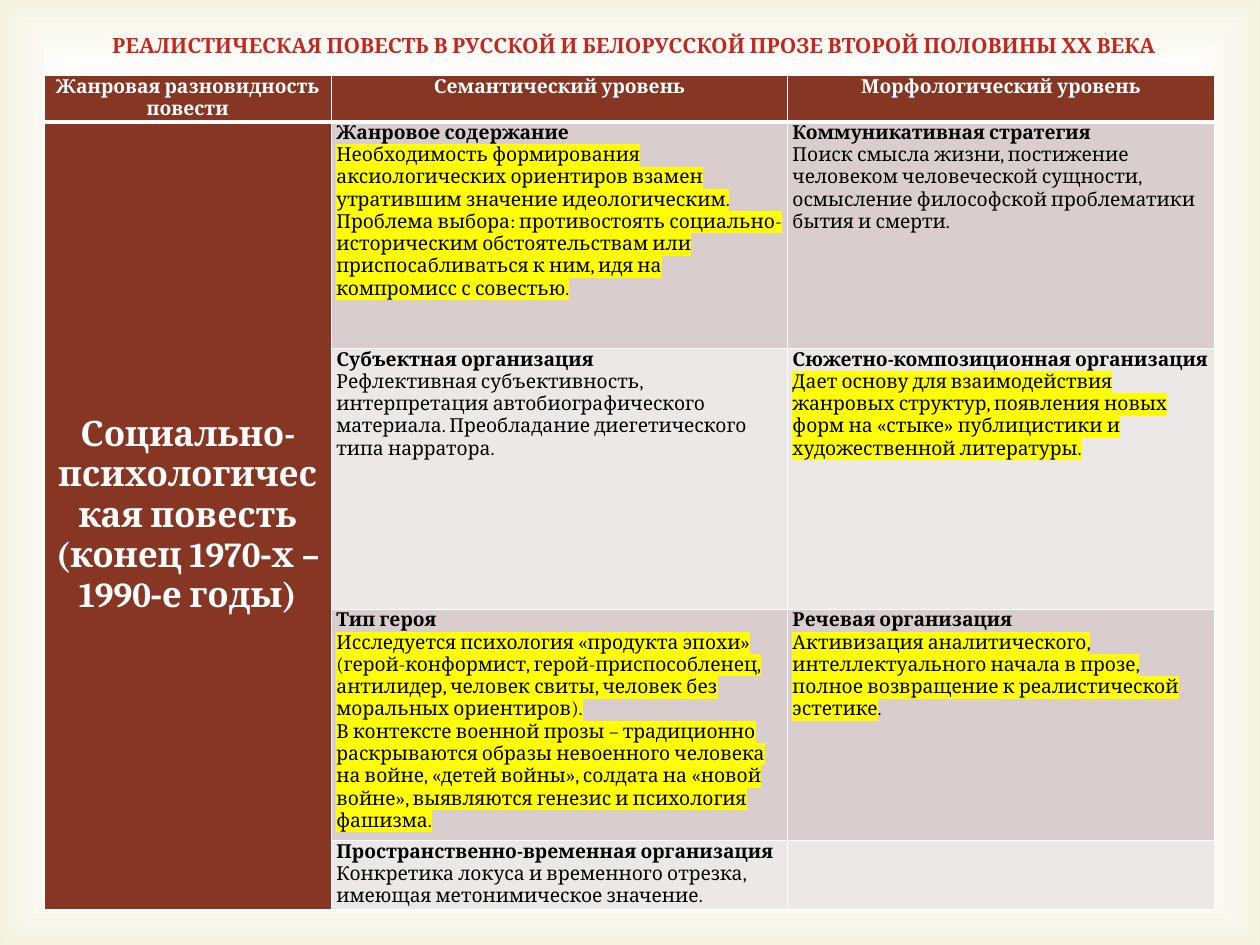
from collections import namedtuple
from dataclasses import dataclass

from lxml import etree
from pptx import Presentation
from pptx import util as u
from pptx.dml.color import RGBColor
from pptx.enum import shapes, text
from pptx.oxml import parse_xml
from pptx.oxml.ns import nsdecls, qn

Box = namedtuple("Box", "left top width height")
Run = namedtuple("Run", "words marked", defaults=(False,))


@dataclass(frozen=True)
class Theme:
    font: str = "Cambria"
    title: str = "C00000"
    ink: str = "000000"
    paper: str = "FFFFFF"
    glow: str = "D1CA75"
    brown: str = "873624"
    bands: tuple = ("D9CECD", "EDE8E8")
    marker: str = "FFFF00"
    title_size: float = 12
    body_size: float = 11
    genre_size: float = 20
    rule: float = 1
    header_rule: float = 3


THEME = Theme()
TITLE = "РЕАЛИСТИЧЕСКАЯ ПОВЕСТЬ В РУССКОЙ И БЕЛОРУССКОЙ ПРОЗЕ ВТОРОЙ ПОЛОВИНЫ ХХ ВЕКА"
HEADERS = ("Жанровая разновидность повести", "Семантический уровень", "Морфологический уровень")
GENRE = ("Социально-психологическая повесть", "(конец 1970‑х – 1990‑е годы)")
COLUMNS = (2.28, 3.62, 3.39)
ROWS = (0.28, 1.8, 2.07, 1.52, 0.41)

LEVELS = (
    (
        ("Жанровое содержание", [[Run(
            "Необходимость формирования аксиологических ориентиров взамен утратившим значение "
            "идеологическим. Проблема выбора: противостоять социально-историческим "
            "обстоятельствам или приспосабливаться к ним, идя на компромисс с совестью.", True)]]),
        ("Коммуникативная стратегия", [[Run(
            "Поиск смысла жизни, постижение человеком человеческой сущности, осмысление "
            "философской проблематики бытия и смерти.")]]),
    ),
    (
        ("Субъектная организация", [[Run(
            "Рефлективная субъективность, интерпретация автобиографического материала. "
            "Преобладание диегетического типа нарратора.")]]),
        ("Сюжетно-композиционная организация", [[Run(
            "Дает основу для взаимодействия жанровых структур, появления новых форм на «стыке» "
            "публицистики и художественной литературы.", True)]]),
    ),
    (
        ("Тип героя", [
            [Run("Исследуется психология «продукта эпохи» (герой-конформист, "
                 "герой-приспособленец, антилидер, человек свиты, человек без моральных "
                 "ориентиров).", True)],
            [Run("В контексте военной прозы – традиционно раскрываются образы невоенного "
                 "человека на войне, «детей войны», солдата на «новой войне», выявляются "
                 "генезис и психология фашизма.", True)],
        ]),
        ("Речевая организация", [[
            Run("Активизация аналитического, интеллектуального начала в прозе, полное "
                "возвращение к реалистической эстетике", True),
            Run("."),
        ]]),
    ),
    (
        ("Пространственно-временная организация", [[Run(
            "Конкретика локуса и временного отрезка, имеющая метонимическое значение.")]]),
        None,
    ),
)


def add_paragraph(frame, runs, size=THEME.body_size, color=THEME.ink, bold=False,
                  align=text.PP_ALIGN.LEFT):
    first = frame.paragraphs[0]
    paragraph = frame.add_paragraph() if first.runs else first
    paragraph.alignment = align
    for words, marked in runs:
        run = paragraph.add_run()
        run.text = words
        run.font.size = u.Pt(size)
        run.font.bold = bold
        run.font.color.rgb = RGBColor.from_string(color)
        if marked:
            highlight = etree.SubElement(run.font._element, qn("a:highlight"))
            etree.SubElement(highlight, qn("a:srgbClr"), val=THEME.marker)
        run.font.name = THEME.font


def draw_backdrop(slide, box):
    backdrop = slide.shapes.add_shape(shapes.MSO_SHAPE.RECTANGLE, *box)
    backdrop.shadow.inherit = False
    backdrop.line.fill.background()
    stops = "".join(
        f'<a:gs pos="{place * 1000}"><a:srgbClr val="{color}">'
        f'<a:alpha val="{alpha * 1000}"/></a:srgbClr></a:gs>'
        for place, color, alpha in ((83, THEME.paper, 11), (100, THEME.glow, 23)))
    gradient = parse_xml(
        f'<a:gradFill {nsdecls("a")} rotWithShape="1"><a:gsLst>{stops}</a:gsLst>'
        '<a:path path="rect"><a:fillToRect l="50000" t="50000" r="50000" b="50000"/></a:path>'
        '</a:gradFill>')
    backdrop._element.spPr.find(qn("a:prstGeom")).addnext(gradient)


def draw_title(slide, box):
    title = slide.shapes.title
    title.left, title.top, title.width, title.height = box
    frame = title.text_frame
    frame.word_wrap = True
    frame.auto_size = text.MSO_AUTO_SIZE.SHAPE_TO_FIT_TEXT
    frame.vertical_anchor = text.MSO_ANCHOR.TOP
    add_paragraph(frame, [Run(TITLE)], size=THEME.title_size, color=THEME.title, bold=True,
                  align=text.PP_ALIGN.CENTER)


def style_cell(cell, fill, bottom_rule):
    cell.margin_left = cell.margin_right = u.Inches(0.04)
    cell.margin_top = cell.margin_bottom = 0
    properties = cell._tc.get_or_add_tcPr()
    for side, width in zip("LRTB", (THEME.rule,) * 3 + (bottom_rule,)):
        properties.append(parse_xml(
            f'<a:ln{side} {nsdecls("a")} w="{u.Pt(width)}"><a:solidFill>'
            f'<a:srgbClr val="{THEME.paper}"/></a:solidFill></a:ln{side}>'))
    cell.fill.solid()
    cell.fill.fore_color.rgb = RGBColor.from_string(fill)


def draw_levels(slide, box):
    table = slide.shapes.add_table(len(ROWS), len(COLUMNS), *box).table
    for column, share in zip(table.columns, COLUMNS):
        column.width = int(box.width * share / sum(COLUMNS))
    for row, share in zip(table.rows, ROWS):
        row.height = int(box.height * share / sum(ROWS))

    for r in range(len(ROWS)):
        for c in range(len(COLUMNS)):
            dark = r == 0 or c == 0
            style_cell(table.cell(r, c), THEME.brown if dark else THEME.bands[(r - 1) % 2],
                       THEME.rule if r else THEME.header_rule)

    label = dict(color=THEME.paper, bold=True, align=text.PP_ALIGN.CENTER)
    for c, header in enumerate(HEADERS):
        add_paragraph(table.cell(0, c).text_frame, [Run(header)], **label)

    genre = table.cell(1, 0)
    genre.merge(table.cell(len(ROWS) - 1, 0))
    genre.vertical_anchor = text.MSO_ANCHOR.MIDDLE
    for line in GENRE:
        add_paragraph(genre.text_frame, [Run(line)], size=THEME.genre_size, **label)

    for r, level in enumerate(LEVELS, start=1):
        for c, aspect in enumerate(level, start=1):
            if aspect:
                heading, paragraphs = aspect
                frame = table.cell(r, c).text_frame
                add_paragraph(frame, [Run(heading)], bold=True)
                for runs in paragraphs:
                    add_paragraph(frame, runs)


def main():
    deck = Presentation()
    deck.slide_width, deck.slide_height = u.Inches(10), u.Inches(7.5)
    slide = deck.slides.add_slide(deck.slide_layouts[5])

    def inches(*lengths):
        return Box(*map(u.Inches, lengths))

    draw_backdrop(slide, Box(0, 0, deck.slide_width, deck.slide_height))
    draw_title(slide, inches(0.43, 0.21, 9.21, 0.3))
    draw_levels(slide, inches(0.35, 0.6, sum(COLUMNS), sum(ROWS)))
    deck.save("out.pptx")


if __name__ == "__main__":
    main()
